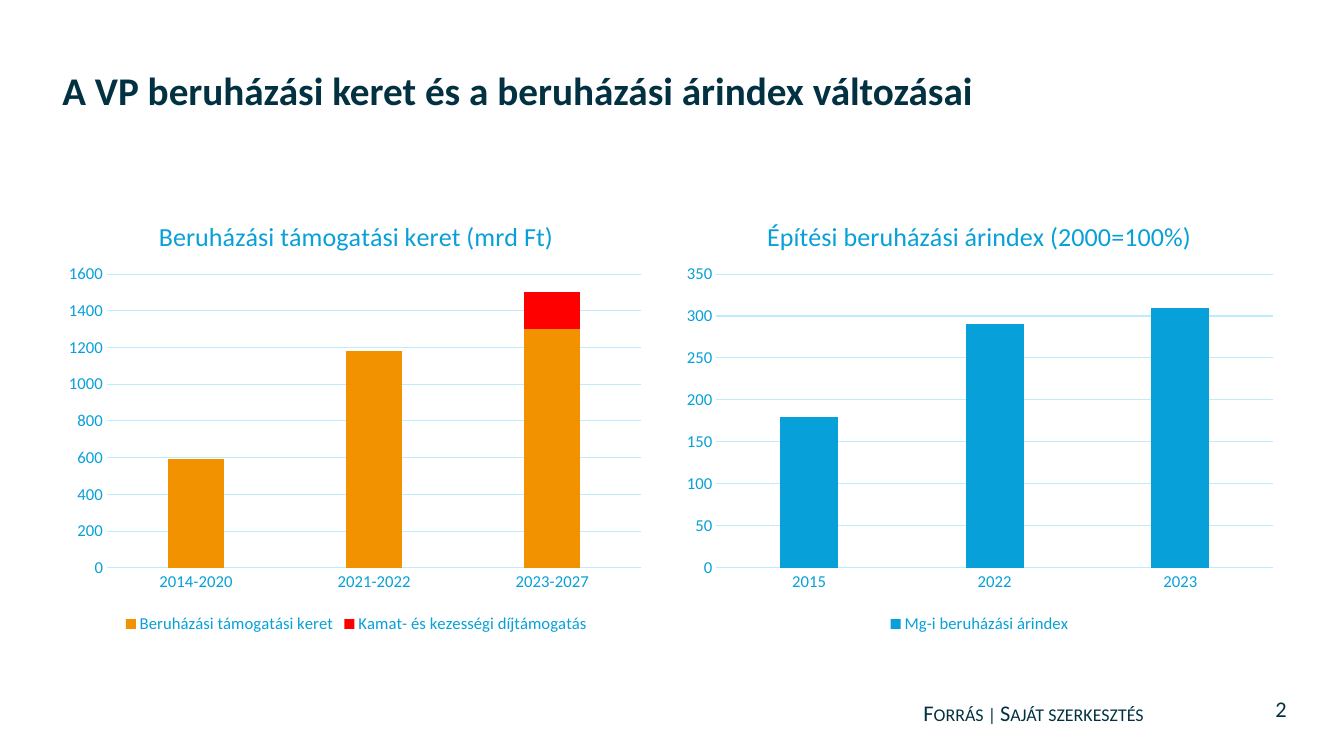
from lxml import etree
from pptx import Presentation
from pptx import util as u
from pptx.chart.data import CategoryChartData
from pptx.dml.color import RGBColor
from pptx.enum import chart as ch, text
from pptx.oxml.ns import qn

THEME = {
    "font": "Calibri",
    "ink": "023142", "blue": "07A0D8", "grid": "BFECFD",
    "orange": "F39200", "red": "FF0000",
    "title": 28, "chart_title": 18.6, "axis": 11.9, "small": 16,
}
W, H = 13.33, 7.5


def style(font, size, color, bold=False):
    font.name = THEME["font"]
    font.size = u.Pt(THEME[size])
    font.bold = bold
    font.color.rgb = RGBColor.from_string(THEME[color])


def place_plot(chart, x, y, w, h):
    """Fix the inner plot area, as shares of the chart's size."""
    area = chart._chartSpace.chart.plotArea
    for old in area.findall(qn("c:layout")):
        area.remove(old)
    layout = etree.Element(qn("c:layout"))
    manual = etree.SubElement(layout, qn("c:manualLayout"))
    for tag, val in (("layoutTarget", "inner"), ("xMode", "edge"), ("yMode", "edge"),
                     ("x", x), ("y", y), ("w", w), ("h", h)):
        etree.SubElement(manual, qn("c:" + tag)).set("val", str(val))
    area.insert(0, layout)


prs = Presentation()
prs.slide_width, prs.slide_height = u.Inches(W), u.Inches(H)
s = prs.slides.add_slide(prs.slide_layouts[6])

# Title, source and page number
left, right = text.PP_ALIGN.LEFT, text.PP_ALIGN.RIGHT
top, middle, bottom = (text.MSO_ANCHOR.TOP, text.MSO_ANCHOR.MIDDLE,
                       text.MSO_ANCHOR.BOTTOM)
labels = [
    ("A VP beruházási keret és a beruházási árindex változásai",
     (0.52, 0.27, 10.01, 0.9), "title", left, bottom, True),
    ("Forrás | Saját szerkesztés", (9.06, 6.89, 2.45, 0.37), "small", left, top, False),
    ("2", (9.86, 6.83, 3, 0.4), "small", right, middle, False),
]
for words, box, size, align, anchor, is_title in labels:
    sp = s.shapes.add_textbox(*map(u.Inches, box))
    tf = sp.text_frame
    tf.text = words
    tf.word_wrap = is_title
    tf.vertical_anchor = anchor
    p = tf.paragraphs[0]
    p.alignment = align
    r = p.runs[0]
    style(r.font, size, "ink", is_title)
    if words.startswith("Forrás"):
        r.font._element.set("cap", "small")

# Two column charts side by side
charts = [
    {"title": "Beruházási támogatási keret (mrd Ft)",
     "kind": ch.XL_CHART_TYPE.COLUMN_STACKED, "overlap": 100,
     "left": 0.59, "width": 5.89, "plot": (0.08, 0.9),
     "max": 1600, "step": 200,
     "cats": ["2014-2020", "2021-2022", "2023-2027"],
     "series": [("Beruházási támogatási keret", (590, 1180, 1300), "orange"),
                ("Kamat- és kezességi díjtámogatás", (None, None, 200), "red")]},
    {"title": "Építési beruházási árindex (2000=100%)",
     "kind": ch.XL_CHART_TYPE.COLUMN_CLUSTERED, "overlap": -27,
     "left": 6.68, "width": 6.07, "plot": (0.07, 0.91),
     "max": 350, "step": 50,
     "cats": ["2015", "2022", "2023"],
     "series": [("Mg-i beruházási árindex", (180, 290, 310), "blue")]},
]
for c in charts:
    data = CategoryChartData()
    data.categories = c["cats"]
    for name, values, _ in c["series"]:
        data.add_series(name, values)
    chart = s.shapes.add_chart(c["kind"], u.Inches(c["left"]), u.Inches(1.98),
                               u.Inches(c["width"]), u.Inches(4.35), data).chart
    style(chart.font, "axis", "blue")

    chart.has_title = True
    chart.chart_title.include_in_layout = False
    tf = chart.chart_title.text_frame
    tf.text = c["title"]
    style(tf.paragraphs[0].runs[0].font, "chart_title", "blue")

    chart.has_legend = True
    chart.legend.position = ch.XL_LEGEND_POSITION.BOTTOM
    chart.legend.include_in_layout = False
    style(chart.legend.font, "axis", "blue")

    plot = chart.plots[0]
    plot.gap_width, plot.overlap = 219, c["overlap"]
    plot.vary_by_categories = False
    for series, (_, _, color) in zip(plot.series, c["series"]):
        series.format.fill.solid()
        series.format.fill.fore_color.rgb = RGBColor.from_string(THEME[color])

    cat, val = chart.category_axis, chart.value_axis
    for axis in (cat, val):
        axis.major_tick_mark = axis.minor_tick_mark = ch.XL_TICK_MARK.NONE
        style(axis.tick_labels.font, "axis", "blue")
    val.minimum_scale, val.maximum_scale, val.major_unit = 0, c["max"], c["step"]
    val.format.line.fill.background()
    val.has_major_gridlines = True
    for line in (cat.format.line, val.major_gridlines.format.line):
        line.color.rgb = RGBColor.from_string(THEME["grid"])
        line.width = u.Pt(0.75)

    x, w = c["plot"]
    place_plot(chart, x, 0.17, w, 0.67)

prs.save("out.pptx")
